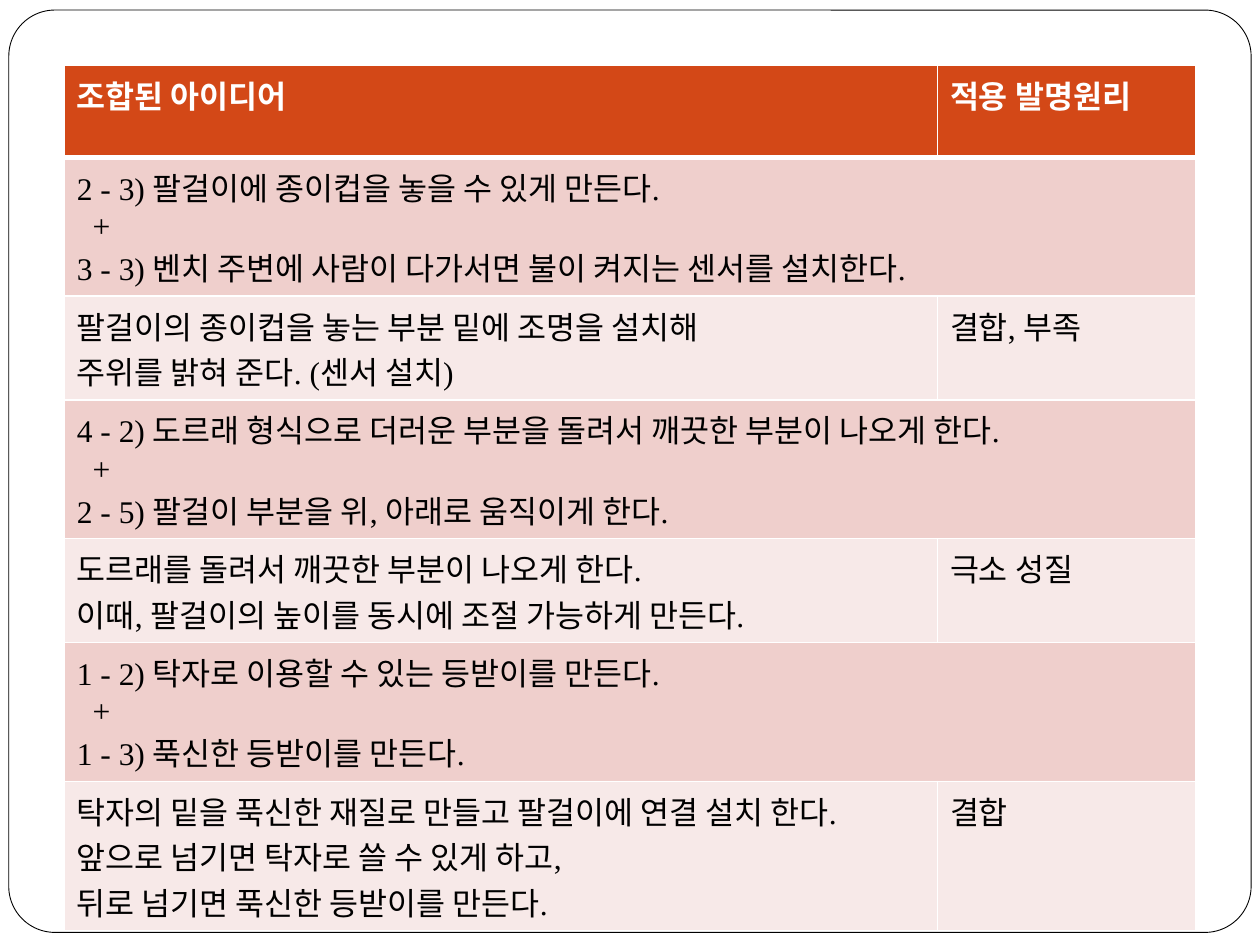
from lxml import etree
from pptx import Presentation
from pptx.dml.color import RGBColor
from pptx.enum.shapes import MSO_SHAPE
from pptx.oxml.ns import qn
from pptx.util import Inches, Pt

ROUNDED = MSO_SHAPE.ROUNDED_RECTANGLE
WHITE, BLACK = "FFFFFF", "000000"
HEADER, SOURCE_IDEAS, RESULT = "D34817", "EFCFCC", "F7E9E8"
COLUMNS = [6.93, 2.05]
ROWS = [0.73, 1.03, 0.72, 1.03, 0.73, 1.02, 1.03]
PLUS_INDENT = Pt(9)


def rgb(value):
    return RGBColor.from_string(value)


def add_border(cell, side, width):
    line = etree.SubElement(cell._tc.get_or_add_tcPr(), qn(f"a:ln{side}"), w=str(Pt(width)))
    fill = etree.SubElement(line, qn("a:solidFill"))
    etree.SubElement(fill, qn("a:srgbClr"), val=WHITE)


# One entry per row: a single cell spans both columns
content = [
    [["조합된 아이디어"], ["적용 발명원리"]],
    [["2 - 3) 팔걸이에 종이컵을 놓을 수 있게 만든다.", "+",
      "3 - 3) 벤치 주변에 사람이 다가서면 불이 켜지는 센서를 설치한다."]],
    [["팔걸이의 종이컵을 놓는 부분 밑에 조명을 설치해", "주위를 밝혀 준다. (센서 설치)"],
     ["결합, 부족"]],
    [["4 - 2) 도르래 형식으로 더러운 부분을 돌려서 깨끗한 부분이 나오게 한다.", "+",
      "2 - 5) 팔걸이 부분을 위, 아래로 움직이게 한다."]],
    [["도르래를 돌려서 깨끗한 부분이 나오게 한다.",
      "이때, 팔걸이의 높이를 동시에 조절 가능하게 만든다."],
     ["극소 성질"]],
    [["1 - 2) 탁자로 이용할 수 있는 등받이를 만든다.", "+",
      "1 - 3) 푹신한 등받이를 만든다."]],
    [["탁자의 밑을 푹신한 재질로 만들고 팔걸이에 연결 설치 한다. 앞으로 넘기면 탁자로 쓸 수 있게 하고,",
      "뒤로 넘기면 푹신한 등받이를 만든다."],
     ["결합"]],
]

prs = Presentation()
prs.slide_width, prs.slide_height = Inches(10), Inches(7.5)
slide = prs.slides.add_slide(prs.slide_layouts[6])

frame = slide.shapes.add_shape(ROUNDED, Inches(0.07), Inches(0.08), Inches(9.86), Inches(7.32))
frame.adjustments[0] = 0.05
frame.shadow.inherit = False
frame.fill.solid()
frame.fill.fore_color.rgb = rgb(WHITE)
frame.line.color.rgb = rgb(BLACK)
frame.line.width = Pt(0.5)

ideas = slide.shapes.add_table(
    len(ROWS), len(COLUMNS), Inches(0.51), Inches(0.52),
    Inches(sum(COLUMNS)), Inches(sum(ROWS))).table
for column, width in zip(ideas.columns, COLUMNS):
    column.width = Inches(width)
for row, height in zip(ideas.rows, ROWS):
    row.height = Inches(height)

for r, entries in enumerate(content):
    is_header = r == 0
    background = HEADER if is_header else SOURCE_IDEAS if r % 2 else RESULT

    for c in range(len(COLUMNS)):
        cell = ideas.cell(r, c)
        for side in "LRTB":
            heavy = (is_header and side == "B") or (r == 1 and side == "T")
            add_border(cell, side, 3 if heavy else 1)
        cell.fill.solid()
        cell.fill.fore_color.rgb = rgb(background)

    if len(entries) == 1:
        ideas.cell(r, 0).merge(ideas.cell(r, 1))

    for c, lines in enumerate(entries):
        text = ideas.cell(r, c).text_frame
        for i, line in enumerate(lines):
            paragraph = text.add_paragraph() if i else text.paragraphs[0]
            if line == "+":
                paragraph._p.get_or_add_pPr().set("marL", str(PLUS_INDENT))
            run = paragraph.add_run()
            run.text = line
            run.font.name = "Times New Roman"
            run.font.size = Pt(18)
            run.font.bold = is_header
            run.font.color.rgb = rgb(WHITE if is_header else BLACK)

prs.save("out.pptx")
